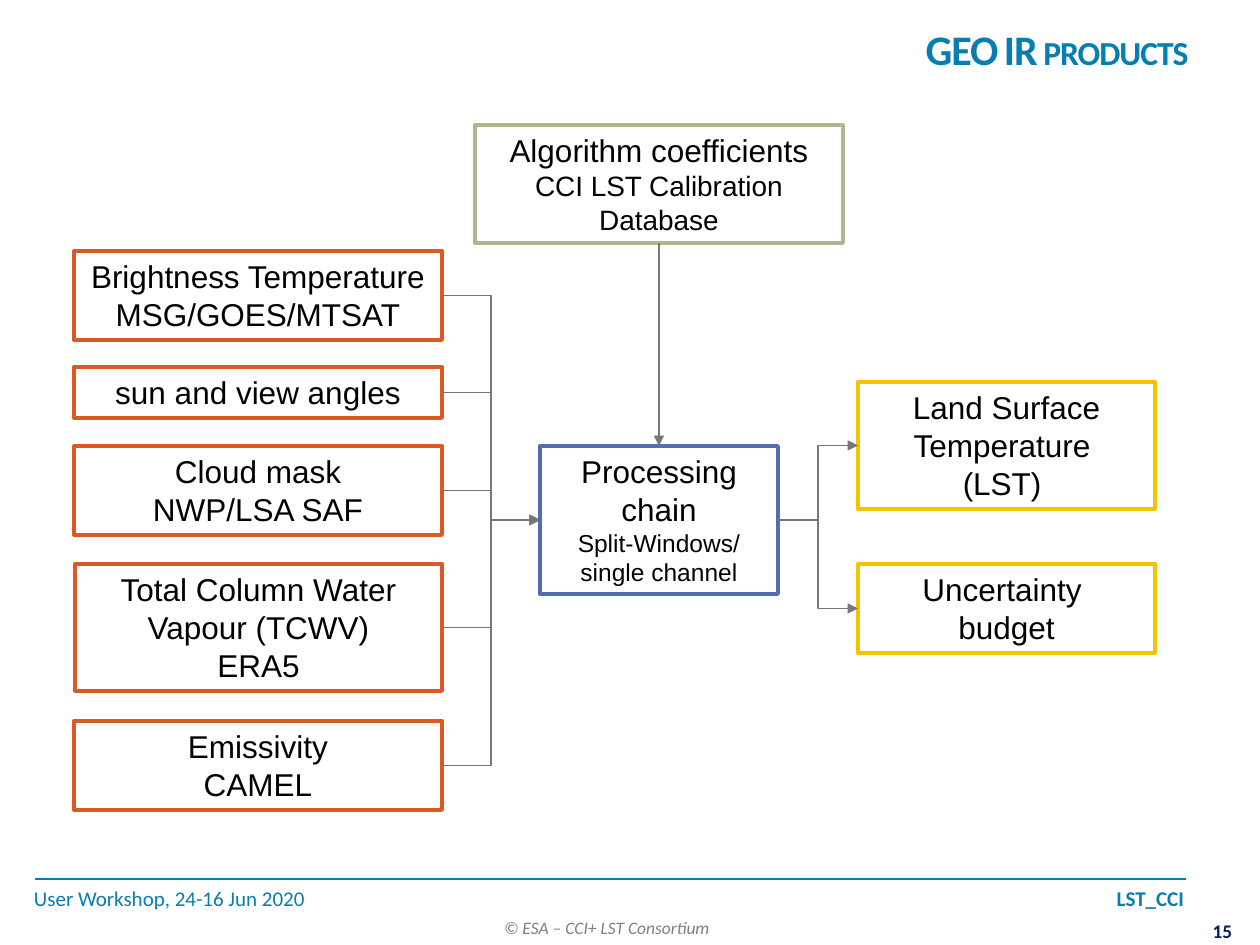
"""Build the GEO IR products slide: inputs, processing chain and outputs."""
from lxml import etree
from pptx import Presentation, util as u
from pptx.dml.color import RGBColor
from pptx.enum import shapes, text
from pptx.oxml.ns import qn

PX = 914400 / 126
TEAL = RGBColor(0x06, 0x7E, 0xB0)
NAVY = RGBColor(0x04, 0x1E, 0x5D)
GRAY = RGBColor(0x80, 0x80, 0x80)
LINE_GRAY = RGBColor(0x77, 0x77, 0x77)
ORANGE = RGBColor(0xDC, 0x59, 0x24)
BLUE = RGBColor(0x52, 0x6D, 0xB0)
YELLOW = RGBColor(0xF5, 0xC2, 0x01)
KHAKI = RGBColor(0xB4, 0xB3, 0x92)
BLACK = RGBColor(0, 0, 0)
WHITE = RGBColor(0xFF, 0xFF, 0xFF)
LEFT, CENTER, RIGHT = text.PP_ALIGN.LEFT, text.PP_ALIGN.CENTER, text.PP_ALIGN.RIGHT
ELBOW, STRAIGHT = shapes.MSO_CONNECTOR.ELBOW, shapes.MSO_CONNECTOR.STRAIGHT


def add_run(paragraph, wording, size, color, font="Calibri", bold=False, italic=False):
    run = paragraph.add_run()
    run.text = wording
    run.font.size = u.Pt(size)
    run.font.name = font
    run.font.color.rgb = color
    run.font.bold = bold
    run.font.italic = italic
    return run


def add_line(kind, ends, color, arrow=False):
    connector = slide.shapes.add_connector(kind, *[round(end) for end in ends])
    connector.line.color.rgb = color
    connector.line.width = u.Pt(1)
    properties = connector._element.spPr
    if arrow:
        etree.SubElement(properties.find(qn("a:ln")), qn("a:tailEnd"), type="triangle")
    etree.SubElement(properties, qn("a:effectLst"))
    return connector


presentation = Presentation()
presentation.slide_width = round(1260 * PX)
presentation.slide_height = round(945 * PX)
slide = presentation.slides.add_slide(presentation.slide_layouts[6])

captions = {}
for name, bounds, margins, wrap, alignment in [
    ("footer", (34, 880, 1152, 38), (0, 6), True, LEFT),
    ("copyright", (491, 911, 234, 34), (13, 6), False, LEFT),
    ("number", (1206, 919, 33, 24), (0, 0), False, CENTER),
    ("title", (441, 7, 745, 84), (13, 6), True, RIGHT),
]:
    box = slide.shapes.add_textbox(*[round(length * PX) for length in bounds])
    frame = box.text_frame
    frame.word_wrap = wrap
    frame.margin_left = frame.margin_right = round(margins[0] * PX)
    frame.margin_top = frame.margin_bottom = round(margins[1] * PX)
    if name == "title":
        frame.vertical_anchor = text.MSO_ANCHOR.MIDDLE
    captions[name] = frame.paragraphs[0]
    captions[name].alignment = alignment

tab_stops = etree.SubElement(captions["footer"]._p.get_or_add_pPr(), qn("a:tabLst"))
etree.SubElement(tab_stops, qn("a:tab"), pos=str(round(1150 * PX)), algn="r")
add_run(captions["footer"], "User Workshop, 24-16 Jun 2020\t", 12, TEAL)
add_run(captions["footer"], "LST_CCI", 12, TEAL, bold=True)
add_run(captions["copyright"], "© ESA – CCI+ LST Consortium", 10, GRAY, italic=True)
add_run(captions["number"], "15", 11, NAVY, bold=True)
title_run = add_run(captions["title"], "GEO IR products", 24, TEAL, bold=True)
title_run.font._element.set("cap", "small")
title_run.font._element.set("spc", "-60")
add_line(STRAIGHT, (35 * PX, 879 * PX, 1186 * PX, 879 * PX), TEAL)

boxes = {}
for name, bounds, color, lines in [
    ("water vapour", (75, 564, 367, 127), ORANGE,
     [("Total Column Water Vapour (TCWV)", 18), ("ERA5", 18)]),
    ("brightness", (74, 251, 368, 89), ORANGE,
     [("Brightness Temperature", 18), ("MSG/GOES/MTSAT", 18)]),
    ("angles", (74, 367, 368, 51), ORANGE, [("sun and view angles", 18)]),
    ("cloud mask", (74, 446, 368, 89), ORANGE, [("Cloud mask", 18), ("NWP/LSA SAF", 18)]),
    ("emissivity", (74, 721, 368, 89), ORANGE, [("Emissivity", 18), ("CAMEL", 18)]),
    ("processing", (540, 446, 238, 148), BLUE,
     [("Processing chain", 18), ("Split-Windows/ single channel", 14)]),
    ("temperature", (858, 382, 297, 127), YELLOW,
     [("Land Surface Temperature ", 18), ("(LST) ", 18)]),
    ("uncertainty", (858, 564, 297, 89), YELLOW, [("Uncertainty ", 18), ("budget", 18)]),
    ("coefficients", (475, 125, 368, 118), KHAKI,
     [("Algorithm coefficients", 18), ("CCI LST Calibration Database", 16)]),
]:
    shape = slide.shapes.add_shape(
        shapes.MSO_SHAPE.RECTANGLE, *[round(length * PX) for length in bounds])
    shape.shadow.inherit = False
    shape.fill.solid()
    shape.fill.fore_color.rgb = WHITE
    shape.line.color.rgb = color
    shape.line.width = u.Pt(2.25)
    frame = shape.text_frame
    frame.word_wrap = True
    frame.vertical_anchor = text.MSO_ANCHOR.TOP
    for index, (wording, size) in enumerate(lines):
        paragraph = frame.add_paragraph() if index else frame.paragraphs[0]
        paragraph.alignment = CENTER
        add_run(paragraph, wording, size, BLACK, "Arial")
    boxes[name] = shape

TOP_SITE, LEFT_SITE, BOTTOM_SITE, RIGHT_SITE = range(4)
inputs = ["brightness", "angles", "cloud mask", "water vapour", "emissivity"]
flows = [(name, "processing") for name in inputs]
flows += [("processing", name) for name in ("temperature", "uncertainty")]
for source_name, target_name in flows:
    source, target = boxes[source_name], boxes[target_name]
    ends = (source.left + source.width, source.top + source.height / 2,
            target.left, target.top + target.height / 2)
    connector = add_line(ELBOW, ends, LINE_GRAY, arrow=True)
    connector.begin_connect(source, RIGHT_SITE)
    connector.end_connect(target, LEFT_SITE)

source, target = boxes["coefficients"], boxes["processing"]
center = target.left + target.width / 2
add_line(STRAIGHT, (center, source.top + source.height, center, target.top),
         LINE_GRAY, arrow=True)

presentation.save("out.pptx")
